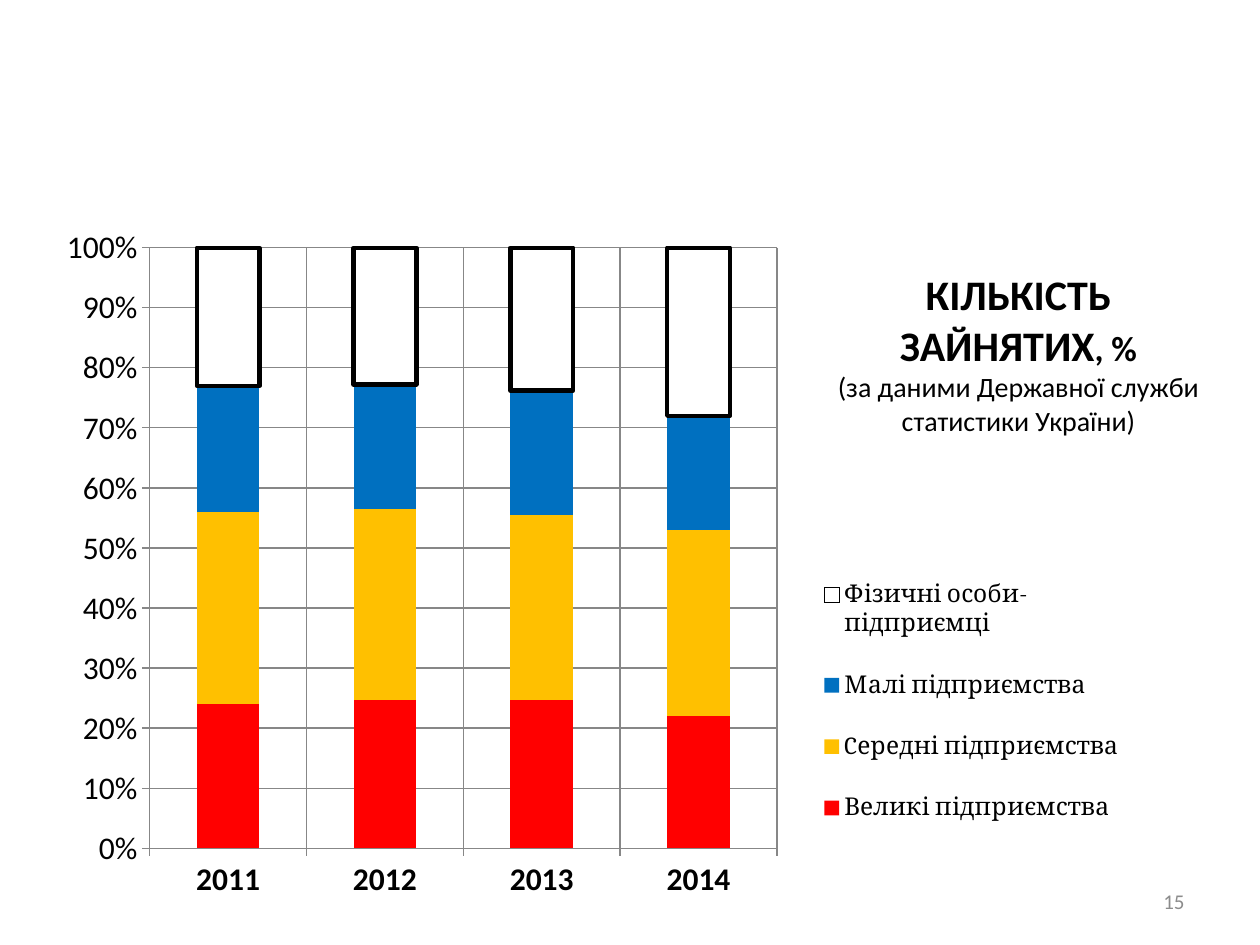
from dataclasses import dataclass

import pptx
import pptx.chart.data
import pptx.dml.color
import pptx.enum.chart
import pptx.enum.text
import pptx.oxml
import pptx.oxml.ns
import pptx.util


@dataclass(frozen=True)
class Theme:
    font: str = "Calibri"
    legend_font: str = "Cambria"
    text: str = "000000"
    muted: str = "8C8C8C"
    grid: str = "878787"
    heading_size: int = 24
    unit_size: int = 20
    note_size: int = 16
    axis_size: int = 18
    legend_size: int = 14
    number_size: int = 12


THEME = Theme()
SLIDE_WIDTH, SLIDE_HEIGHT = 10, 7.5
COLUMNS, ROWS = 24, 18

YEARS = ["2011", "2012", "2013", "2014"]
SERIES = [
    ("Великі підприємства", (24, 25, 25, 22), "FF0000"),
    ("Cередні підприємства", (32, 32, 31, 31), "FFC000"),
    ("Малі підприємства", (21, 21, 21, 19), "0070C0"),
    ("Фізичні особи-підприємці", (23, 23, 24, 28), "FFFFFF"),
]
OUTLINED_SERIES = "Фізичні особи-підприємці"
PLOT_SHARES = (0.09, 0.04, 0.58, 0.88)
LEGEND_SHARES = (0.71, 0.48, 0.28, 0.45)


def grid_box(column, row, columns, rows):
    """Turn grid cells into left, top, width and height."""
    cell_width, cell_height = SLIDE_WIDTH / COLUMNS, SLIDE_HEIGHT / ROWS
    return (
        pptx.util.Inches(column * cell_width),
        pptx.util.Inches(row * cell_height),
        pptx.util.Inches(columns * cell_width),
        pptx.util.Inches(rows * cell_height),
    )


def color(value):
    return pptx.dml.color.RGBColor.from_string(value)


def set_font(font, size, value=THEME.text, name=THEME.font, bold=False):
    font.name = name
    font.size = pptx.util.Pt(size)
    font.bold = bold
    font.color.rgb = color(value)


def set_line(line, value, width):
    line.color.rgb = color(value)
    line.width = pptx.util.Pt(width)


def layout_xml(shares, inner=False):
    """Return a manual chart layout for shares of the chart's size."""
    target = '<c:layoutTarget val="inner"/>' if inner else ""
    modes = '<c:xMode val="edge"/><c:yMode val="edge"/>'
    sizes = "".join(f'<c:{key} val="{share}"/>' for key, share in zip("xywh", shares))
    return pptx.oxml.parse_xml(
        f'<c:layout {pptx.oxml.ns.nsdecls("c")}>'
        f"<c:manualLayout>{target}{modes}{sizes}</c:manualLayout></c:layout>"
    )


def place_plot(chart):
    plot_area = chart.element.find(".//" + pptx.oxml.ns.qn("c:plotArea"))
    for layout in plot_area.findall(pptx.oxml.ns.qn("c:layout")):
        plot_area.remove(layout)
    plot_area.insert(0, layout_xml(PLOT_SHARES, inner=True))


def clear_background(chart):
    chart.element.find(pptx.oxml.ns.qn("c:chart")).addnext(
        pptx.oxml.parse_xml(
            f'<c:spPr {pptx.oxml.ns.nsdecls("c", "a")}>'
            "<a:noFill/><a:ln><a:noFill/></a:ln></c:spPr>"
        )
    )


def format_axis(axis, bold=False):
    axis.has_major_gridlines = True
    set_line(axis.major_gridlines.format.line, THEME.grid, 0.75)
    set_line(axis.format.line, THEME.grid, 0.75)
    axis.major_tick_mark = pptx.enum.chart.XL_TICK_MARK.OUTSIDE
    axis.minor_tick_mark = pptx.enum.chart.XL_TICK_MARK.NONE
    set_font(axis.tick_labels.font, THEME.axis_size, bold=bold)


def add_legend(chart):
    chart.has_legend = True
    legend = chart.legend
    legend.position = pptx.enum.chart.XL_LEGEND_POSITION.RIGHT
    legend.include_in_layout = False
    set_font(legend.font, THEME.legend_size, name=THEME.legend_font)
    element = chart.element.find(".//" + pptx.oxml.ns.qn("c:legend"))
    for layout in element.findall(pptx.oxml.ns.qn("c:layout")):
        element.remove(layout)
    position = element.find(pptx.oxml.ns.qn("c:legendPos"))
    position.addnext(layout_xml(LEGEND_SHARES))


def add_employment_chart(slide):
    data = pptx.chart.data.CategoryChartData()
    data.categories = YEARS
    for name, values, _ in SERIES:
        data.add_series(name, values)
    chart = slide.shapes.add_chart(
        pptx.enum.chart.XL_CHART_TYPE.COLUMN_STACKED_100,
        *grid_box(1, 4.2, 20.6, 13),
        data,
    ).chart
    chart.has_title = False
    set_font(chart.font, THEME.axis_size)
    clear_background(chart)
    place_plot(chart)

    plot = chart.plots[0]
    plot.gap_width = 150
    plot.overlap = 100
    plot.vary_by_categories = False
    for series, (name, _, fill) in zip(plot.series, SERIES):
        series.format.fill.solid()
        series.format.fill.fore_color.rgb = color(fill)
        if name == OUTLINED_SERIES:
            set_line(series.format.line, THEME.text, 2.5)

    format_axis(chart.category_axis, bold=True)
    format_axis(chart.value_axis)
    chart.value_axis.maximum_scale = 1
    chart.value_axis.major_unit = 0.1
    chart.value_axis.tick_labels.number_format = "0%"
    chart.value_axis.tick_labels.number_format_is_linked = False
    add_legend(chart)


def fill_heading(slide):
    title = slide.shapes.title
    title.left, title.top, title.width, title.height = grid_box(15.6, 5, 7.6, 3.48)
    frame = title.text_frame
    frame.word_wrap = True
    frame.auto_size = pptx.enum.text.MSO_AUTO_SIZE.SHAPE_TO_FIT_TEXT
    frame.vertical_anchor = pptx.enum.text.MSO_ANCHOR.TOP

    heading = frame.paragraphs[0]
    for text, size in (
        ("КІЛЬКІСТЬ ЗАЙНЯТИХ", THEME.heading_size),
        (", %", THEME.unit_size),
    ):
        run = heading.add_run()
        run.text = text
        set_font(run.font, size, bold=True)

    note = frame.add_paragraph()
    note.text = "(за даними Державної служби статистики України)"
    set_font(note.font, THEME.note_size)
    for paragraph in frame.paragraphs:
        paragraph.alignment = pptx.enum.text.PP_ALIGN.CENTER


def add_slide_number(slide, number):
    frame = slide.shapes.add_textbox(*grid_box(17.2, 16.68, 5.6, 0.96)).text_frame
    frame.word_wrap = True
    frame.vertical_anchor = pptx.enum.text.MSO_ANCHOR.MIDDLE
    paragraph = frame.paragraphs[0]
    paragraph.text = number
    paragraph.alignment = pptx.enum.text.PP_ALIGN.RIGHT
    set_font(paragraph.font, THEME.number_size, THEME.muted)


def main():
    presentation = pptx.Presentation()
    presentation.slide_width = pptx.util.Inches(SLIDE_WIDTH)
    presentation.slide_height = pptx.util.Inches(SLIDE_HEIGHT)
    slide = presentation.slides.add_slide(
        presentation.slide_layouts.get_by_name("Title Only")
    )
    add_slide_number(slide, "15")
    add_employment_chart(slide)
    fill_heading(slide)
    presentation.save("out.pptx")


if __name__ == "__main__":
    main()
